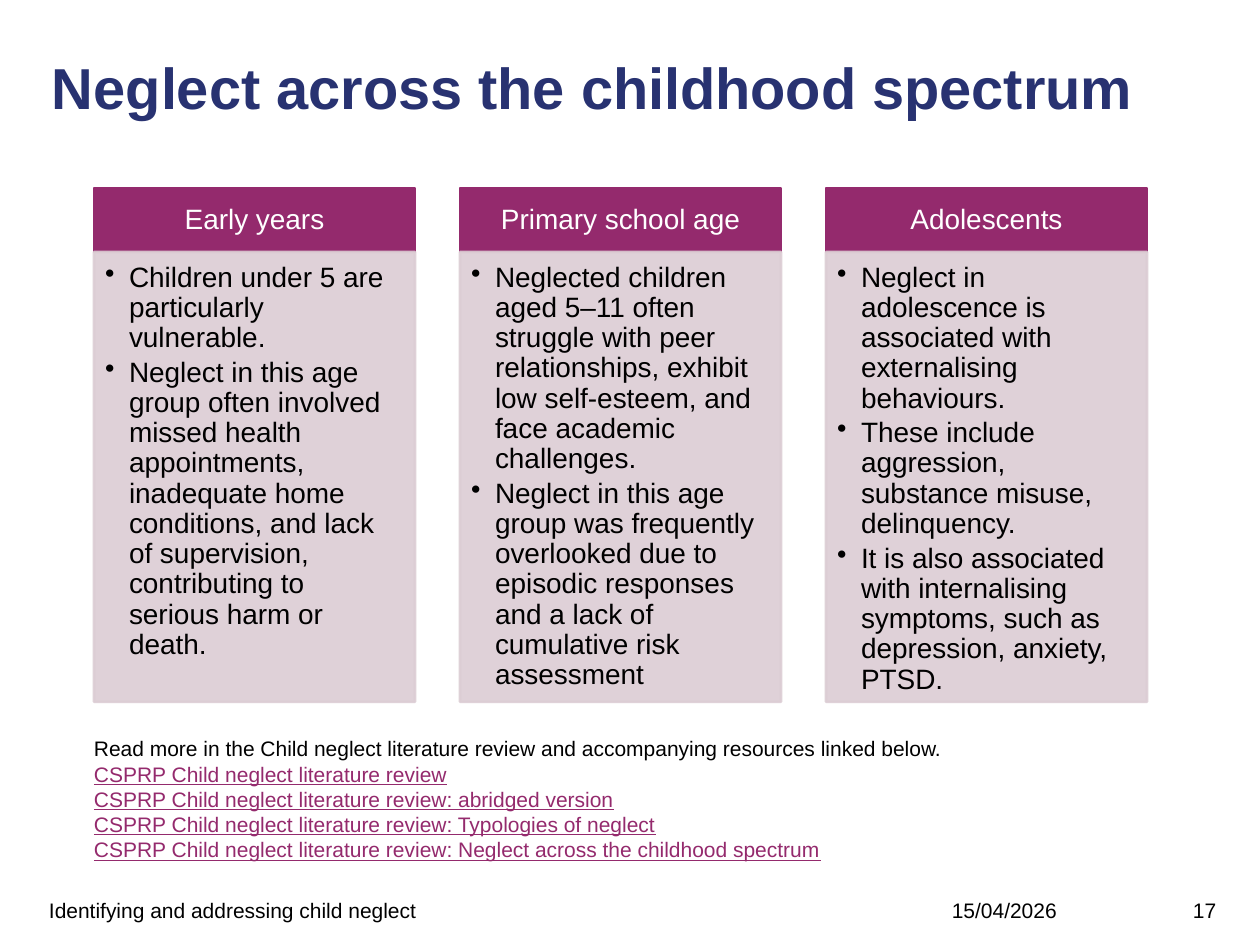
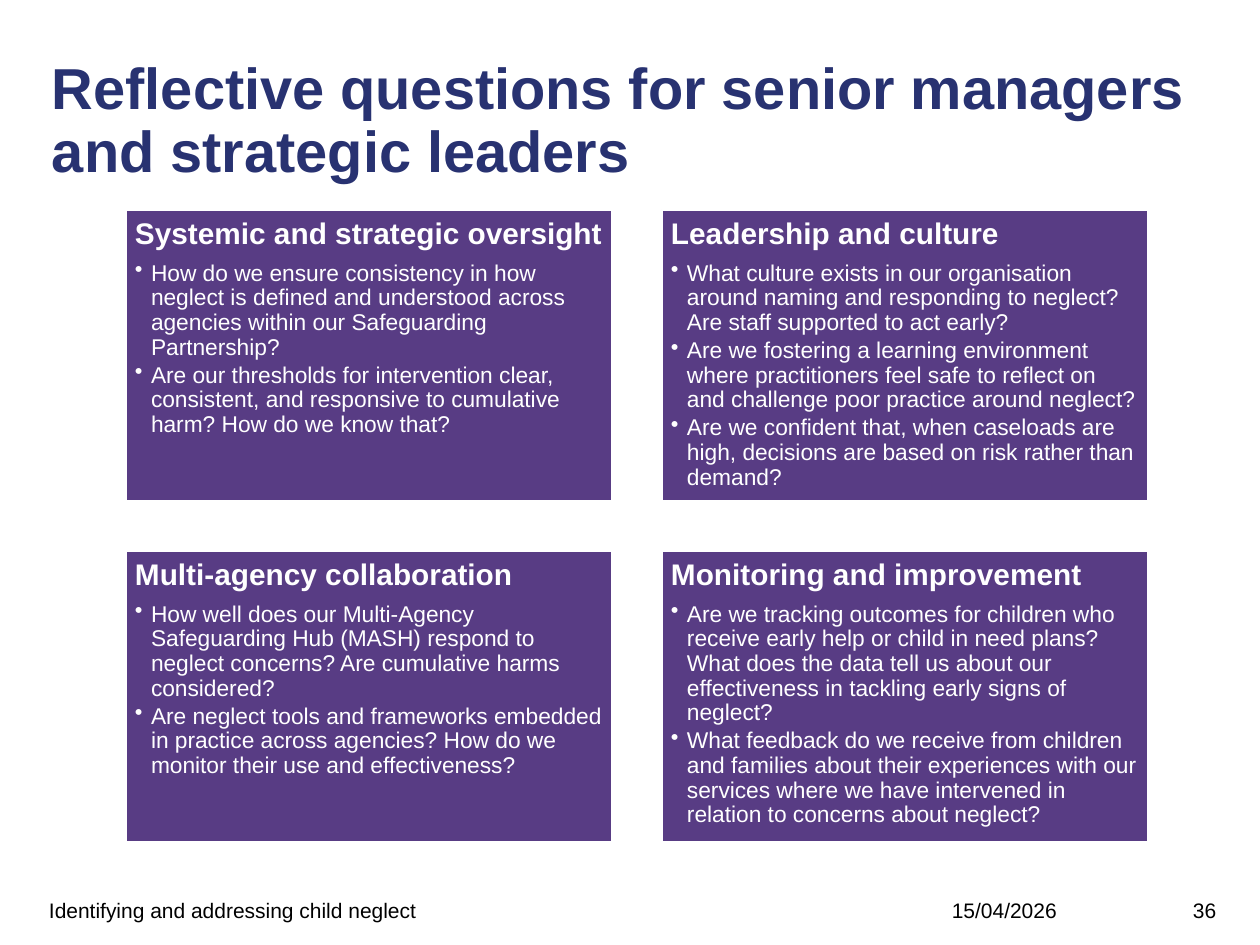
import lxml.etree
import pptx
import pptx.dml.color
import pptx.enum.shapes
import pptx.enum.text
import pptx.oxml.ns
import pptx.util

EMU_PER_PX = 914400 / 126
COLOURS = {
    "navy": "283271",
    "plum": "942A6D",
    "blush": "DCCDD4",
    "purple": "583C84",
    "white": "FFFFFF",
    "black": "000000",
}
ALIGN = pptx.enum.text.PP_ALIGN
ANCHOR = pptx.enum.text.MSO_ANCHOR

STYLES = {
    "title": {"colour": "navy", "font": {"size": 33, "bold": True},
              "paragraph": {"line_spacing": 0.9, "alignment": ALIGN.LEFT}},
    "footer": {"colour": "black", "font": {"size": 12}, "paragraph": {"alignment": ALIGN.LEFT}},
    "date": {"colour": "black", "font": {"size": 12}, "paragraph": {"alignment": ALIGN.RIGHT}},
    "stage": {"colour": "white", "font": {"size": 16},
              "paragraph": {"line_spacing": 0.9, "alignment": ALIGN.CENTER}},
    "finding": {"colour": "black", "font": {"size": 16}, "indent": 24,
                "paragraph": {"line_spacing": 0.9, "space_after": 2.6, "alignment": ALIGN.LEFT}},
    "theme": {"colour": "white", "font": {"size": 17, "bold": True},
              "paragraph": {"line_spacing": 0.9, "space_after": 6, "alignment": ALIGN.LEFT}},
    "question": {"colour": "white", "font": {"size": 13}, "indent": 16,
                 "paragraph": {"line_spacing": 0.9, "space_after": 2, "alignment": ALIGN.LEFT}},
    "reading": {"colour": "black", "font": {"size": 12}, "paragraph": {"alignment": ALIGN.LEFT}},
    "resource": {"colour": "plum", "font": {"size": 12, "underline": True},
                 "paragraph": {"alignment": ALIGN.LEFT}},
}

FOOTER = "Identifying and addressing child neglect"
DATE = "15/04/2026"

STAGES = {
    "Early years": [
        "Children under 5 are particularly vulnerable.",
        "Neglect in this age group often involved missed health appointments, inadequate home "
        "conditions, and lack of supervision, contributing to serious harm or death.",
    ],
    "Primary school age": [
        "Neglected children aged 5–11 often struggle with peer relationships, exhibit low "
        "self-esteem, and face academic challenges.",
        "Neglect in this age group was frequently overlooked due to episodic responses and a "
        "lack of cumulative risk assessment",
    ],
    "Adolescents": [
        "Neglect in adolescence is associated with externalising behaviours.",
        "These include aggression, substance misuse, delinquency.",
        "It is also associated with internalising symptoms, such as depression, anxiety, PTSD.",
    ],
}
REVIEW = "CSPRP Child neglect literature review"
RESOURCES = [
    REVIEW,
    f"{REVIEW}: abridged version",
    f"{REVIEW}: Typologies of neglect",
    f"{REVIEW}: Neglect across the childhood spectrum",
]
THEMES = {
    "Systemic and strategic oversight": [
        "How do we ensure consistency in how neglect is defined and understood across agencies "
        "within our Safeguarding Partnership?",
        "Are our thresholds for intervention clear, consistent, and responsive to cumulative "
        "harm? How do we know that?",
    ],
    "Leadership and culture": [
        "What culture exists in our organisation around naming and responding to neglect? Are "
        "staff supported to act early?",
        "Are we fostering a learning environment where practitioners feel safe to reflect on "
        "and challenge poor practice around neglect?",
        "Are we confident that, when caseloads are high, decisions are based on risk rather "
        "than demand?",
    ],
    "Multi-agency collaboration": [
        "How well does our Multi-Agency Safeguarding Hub (MASH) respond to neglect concerns? "
        "Are cumulative harms considered?",
        "Are neglect tools and frameworks embedded in practice across agencies? How do we "
        "monitor their use and effectiveness?",
    ],
    "Monitoring and improvement": [
        "Are we tracking outcomes for children who receive early help or child in need plans? "
        "What does the data tell us about our effectiveness in tackling early signs of neglect?",
        "What feedback do we receive from children and families about their experiences with "
        "our services where we have intervened in relation to concerns about neglect?",
    ],
}


def px(length):
    return pptx.util.Emu(round(length * EMU_PER_PX))


def rgb(colour):
    return pptx.dml.color.RGBColor.from_string(COLOURS[colour])


def set_attributes(target, values):
    for attribute, value in values.items():
        setattr(target, attribute, value)


def add_bullet(paragraph, indent):
    paragraph.level = 1
    properties = paragraph._p.get_or_add_pPr()
    properties.set("marL", str(px(indent)))
    properties.set("indent", str(-px(indent)))
    bullet = lxml.etree.SubElement(properties, pptx.oxml.ns.qn("a:buChar"))
    bullet.set("char", "•")


def write(shape, lines, insets=(0, 0, 0, 0), anchor=ANCHOR.TOP):
    frame = shape.text_frame
    sides = ("margin_left", "margin_top", "margin_right", "margin_bottom")
    set_attributes(frame, {side: px(inset) for side, inset in zip(sides, insets)})
    set_attributes(frame, {"word_wrap": True, "vertical_anchor": anchor,
                           "auto_size": pptx.enum.text.MSO_AUTO_SIZE.NONE})
    for number, (style_name, words) in enumerate(lines):
        style = STYLES[style_name]
        paragraph = frame.add_paragraph() if number else frame.paragraphs[0]
        if "indent" in style:
            add_bullet(paragraph, style["indent"])
        spacing = dict(style["paragraph"])
        if "space_after" in spacing:
            spacing["space_after"] = pptx.util.Pt(spacing["space_after"])
        set_attributes(paragraph, spacing)
        run = paragraph.add_run()
        run.text = words
        font = {**style["font"], "name": "Arial", "size": pptx.util.Pt(style["font"]["size"])}
        set_attributes(run.font, font)
        run.font.color.rgb = rgb(style["colour"])


def add_text(slide, box, lines, **layout):
    write(slide.shapes.add_textbox(*map(px, box)), lines, **layout)


def add_panel(slide, box, fill, line, lines, opacity=100, **layout):
    panel = slide.shapes.add_shape(pptx.enum.shapes.MSO_SHAPE.RECTANGLE, *map(px, box))
    panel.shadow.inherit = False
    panel.fill.solid()
    panel.fill.fore_color.rgb = rgb(fill)
    panel.line.color.rgb = rgb(line)
    panel.line.width = pptx.util.Pt(1.5)
    if opacity < 100:
        for colour in panel._element.spPr.iter(pptx.oxml.ns.qn("a:srgbClr")):
            alpha = lxml.etree.SubElement(colour, pptx.oxml.ns.qn("a:alpha"))
            alpha.set("val", str(opacity * 1000))
    write(panel, lines, **layout)


def add_base_slide(deck, title, page):
    slide = deck.slides.add_slide(deck.slide_layouts[5])
    heading = slide.shapes.title
    places = dict(zip(("left", "top", "width", "height"), map(px, (52, 60, 1158, 149))))
    set_attributes(heading, places)
    write(heading, [("title", title)])
    for left, width, style, words in (
        (49, 745, "footer", FOOTER),
        (809, 248, "date", DATE),
        (1193, 49, "footer", page),
    ):
        add_text(slide, (left, 898, width, 25), [(style, words)], anchor=ANCHOR.MIDDLE)
    return slide


def add_stage(slide, box, stage, findings):
    left, top, width, height = box
    header = 64
    add_panel(slide, (left, top, width, header), "plum", "plum", [("stage", stage)],
              insets=(15, 9, 15, 9), anchor=ANCHOR.MIDDLE)
    add_panel(slide, (left, top + header, width, height - header), "blush", "blush",
              [("finding", finding) for finding in findings],
              opacity=90, insets=(11, 11, 15, 18))


def add_stage_columns(slide, box):
    left, top, width, height = box
    gap = 45
    column = (width - gap * (len(STAGES) - 1)) // len(STAGES)
    for number, (stage, findings) in enumerate(STAGES.items()):
        add_stage(slide, (left + number * (column + gap), top, column, height), stage, findings)


def add_further_reading(slide, box):
    intro = "Read more in the Child neglect literature review and accompanying resources linked below."
    lines = [("reading", intro)] + [("resource", resource) for resource in RESOURCES]
    add_text(slide, box, lines, insets=(13, 6, 13, 6))


def add_theme_grid(slide, box):
    left, top, width, height = box
    gap = 50
    card_width, card_height = (width - gap) // 2, (height - gap) // 2
    for number, (theme, questions) in enumerate(THEMES.items()):
        row, column = divmod(number, 2)
        card = (left + column * (card_width + gap), top + row * (card_height + gap),
                card_width, card_height)
        lines = [("theme", theme)] + [("question", question) for question in questions]
        add_panel(slide, card, "purple", "white", lines, insets=(9, 9, 9, 9))


def main():
    deck = pptx.Presentation()
    deck.slide_width, deck.slide_height = px(1260), px(945)

    spectrum = add_base_slide(deck, "Neglect across the childhood spectrum", "17")
    add_stage_columns(spectrum, (94, 188, 1053, 514))
    add_further_reading(spectrum, (81, 730, 1048, 140))

    reflection = add_base_slide(
        deck, "Reflective questions for senior managers and strategic leaders", "36")
    add_theme_grid(reflection, (126, 210, 1022, 632))

    deck.save("out.pptx")


if __name__ == "__main__":
    main()
